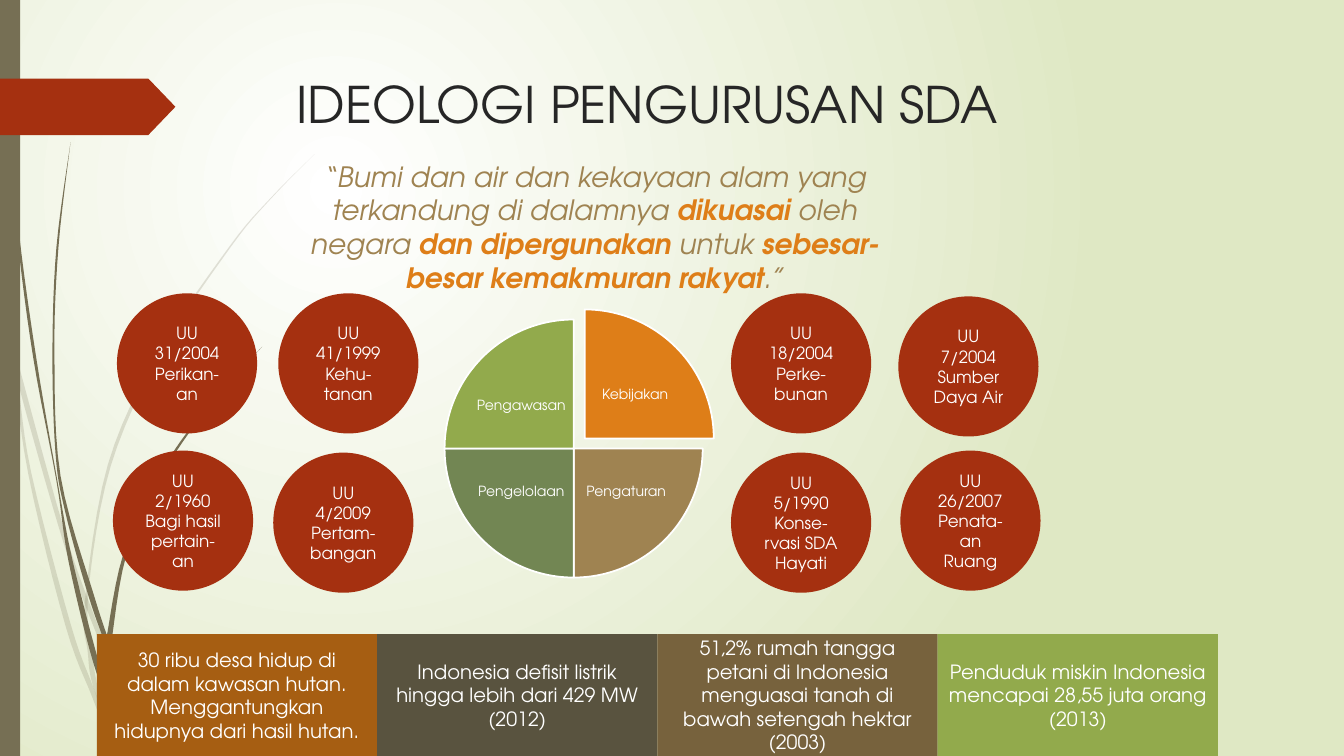
from lxml import etree
from pptx import Presentation
from pptx.dml.color import RGBColor
from pptx.enum.shapes import MSO_SHAPE
from pptx.enum.text import MSO_ANCHOR, PP_ALIGN
from pptx.oxml.ns import qn
from pptx.util import Inches, Pt

RECT, OVAL = MSO_SHAPE.RECTANGLE, MSO_SHAPE.OVAL
PIE, TAG = MSO_SHAPE.PIE, MSO_SHAPE.PENTAGON
TOP, MIDDLE = MSO_ANCHOR.TOP, MSO_ANCHOR.MIDDLE
LEFT, CENTER = PP_ALIGN.LEFT, PP_ALIGN.CENTER

FONT = "TeX Gyre Adventor"
WHITE = RGBColor(0xFF, 0xFF, 0xFF)
PALE_GREEN = RGBColor(0xDF, 0xE8, 0xC4)
INK = RGBColor(0x26, 0x26, 0x26)
RED = RGBColor(0xA5, 0x30, 0x10)
ORANGE = RGBColor(0xDE, 0x7E, 0x18)
TAN = RGBColor(0x9F, 0x83, 0x51)
MOSS = RGBColor(0x72, 0x86, 0x53)
GREEN = RGBColor(0x92, 0xAA, 0x4C)
OLIVE = RGBColor(0x76, 0x6F, 0x54)
RUST = RGBColor(0xA6, 0x5E, 0x12)
DARK_OLIVE = RGBColor(0x59, 0x53, 0x3F)
BROWN = RGBColor(0x77, 0x62, 0x3D)

WIDTH, HEIGHT = 13.33, 7.5
CIRCLE = 1.39
PIE_SIZE = 2.56
FACT_LEFT, FACT_TOP, FACT_WIDTH = 0.96, 6.29, 2.78

# Each stem of grass: the points of its two edges, in inches
PALE_STEMS = [
    ([(0, 2.99), (0.1, 3.44), (0.28, 4.7), (0.65, 6.21), (0.92, 6.93), (1.14, 7.5)],
     [(1.19, 7.5), (0.93, 6.83), (0.7, 6.19), (0.31, 4.69), (0.17, 3.76), (0, 2.82)]),
    ([(0.14, 3.45), (0.17, 3.76), (0.58, 5.22), (0.84, 5.99), (1.23, 6.94), (1.5, 7.5)],
     [(1.55, 7.5), (1.27, 6.92), (0.92, 6.07), (0.62, 5.2), (0.14, 3.45)]),
    ([(1.19, 7.5), (0.93, 6.83), (0.87, 6.46), (0.84, 5.99), (1.07, 4.61),
      (1.58, 3.48), (2.28, 2.44), (2.68, 1.97), (3.12, 1.53)],
     [(3.12, 1.53), (2.68, 1.98), (2.29, 2.45), (1.6, 3.49), (1.1, 4.62),
      (0.88, 5.84), (0.91, 6.46), (1.03, 7.06), (1.24, 7.5)]),
]
DARK_STEMS = [
    ([(0.03, 0), (0.07, 1.1), (0.17, 2.33), (0.33, 3.55), (0.56, 4.77),
      (0.68, 5.57), (0.93, 6.59), (1.17, 7.22), (1.27, 7.5)],
     [(1.33, 7.5), (1.1, 6.91), (0.98, 6.57), (0.72, 5.56), (0.57, 4.77),
      (0.36, 3.55), (0.19, 2.32), (0.08, 1.09), (0.04, 0)]),
    ([(0.7, 1.41), (0.56, 2.45), (0.52, 3.49), (0.55, 4.49), (0.64, 5.05),
      (0.88, 5.92), (1.11, 6.56), (1.32, 7.08), (1.52, 7.5)],
     [(1.57, 7.5), (1.36, 7.06), (1.13, 6.49), (0.93, 5.9), (0.6, 4.72),
      (0.54, 3.49), (0.58, 2.45), (0.7, 1.41)]),
    ([(1.06, 6.31), (1.22, 5.51), (1.56, 4.74), (2.04, 4.05), (2.6, 3.44)],
     [(2.6, 3.44), (2.05, 4.06), (1.58, 4.76), (1.25, 5.52), (1.1, 6.41)]),
]

# Wedge left, top, start and end angle (in 1/60000 degree / 100000), colour,
# then label and its left and top
WEDGES = [
    (4.52, 3.07, 162, 0, ORANGE, "Kebijakan", 5.83, 3.54),
    (4.41, 3.17, 0, 54, TAN, "Pengaturan", 5.74, 4.5),
    (4.41, 3.17, 54, 108, MOSS, "Pengelolaan", 4.7, 4.5),
    (4.41, 3.17, 108, 162, GREEN, "Pengawasan", 4.7, 3.65),
]
QUOTE = [
    ("“Bumi dan air dan kekayaan alam yang terkandung di dalamnya ", False),
    ("dikuasai", True), (" oleh negara ", False),
    ("dan dipergunakan", True), (" untuk ", False),
    ("sebesar-besar kemakmuran rakyat", True), (".”", False),
]
LAWS = [
    (2.76, 2.91, "UU 41/1999 Kehu-tanan"),
    (2.71, 4.49, "UU 4/2009 Pertam-bangan"),
    (7.25, 4.49, "UU 5/1990 Konse-rvasi SDA Hayati"),
    (7.25, 2.91, "UU 18/2004 Perke-bunan"),
    (1.16, 2.91, "UU 31/2004 Perikan-an"),
    (8.91, 2.94, "UU 7/2004 Sumber Daya Air"),
    (1.12, 4.47, "UU 2/1960 Bagi hasil pertain-an"),
    (8.93, 4.47, "UU 26/2007 Penata-an Ruang"),
]
FACTS = [
    (RUST, "30 ribu desa hidup di dalam kawasan hutan. "
           "Menggantungkan hidupnya dari hasil hutan."),
    (DARK_OLIVE, "Indonesia defisit listrik hingga lebih dari 429 MW (2012)"),
    (BROWN, "51,2% rumah tangga petani di Indonesia menguasai tanah "
            "di bawah setengah hektar (2003)"),
    (GREEN, "Penduduk miskin Indonesia mencapai 28,55 juta orang (2013)"),
]


def paint_background(s):
    """Radial gradient, white at the upper left."""
    fill = s.background.fill
    fill.gradient()
    for stop, color in zip(fill.gradient_stops, (WHITE, PALE_GREEN)):
        stop.color.rgb = color
    grad = s._element.find(".//" + qn("a:gradFill"))
    grad.remove(grad.find(qn("a:lin")))
    circle = etree.SubElement(grad, qn("a:path"), path="circle")
    etree.SubElement(circle, qn("a:fillToRect"),
                     l="50000", t="50000", r="100000", b="100000")


def smooth(points, steps=6):
    """Catmull-Rom curve through the points."""
    padded = [points[0], *points, points[-1]]
    curve = []
    for a, b, c, d in zip(padded, padded[1:], padded[2:], padded[3:]):
        for t in (i / steps for i in range(steps)):
            curve.append(tuple(
                b[k] + t * (c[k] - a[k]) / 2
                + t * t * (a[k] - 2.5 * b[k] + 2 * c[k] - d[k] / 2)
                + t ** 3 * (3 * b[k] - 3 * c[k] + d[k] - a[k]) / 2
                for k in (0, 1)))
    return curve + [points[-1]]


def finish(sp, color):
    sp.shadow.inherit = False
    sp.fill.solid()
    sp.fill.fore_color.rgb = color
    sp.line.fill.background()


def add_stem(s, edges, opacity=None):
    outline = [(Inches(x), Inches(y)) for edge in edges for x, y in smooth(edge)]
    builder = s.shapes.build_freeform(*outline[0])
    builder.add_line_segments(outline[1:], close=True)
    sp = builder.convert_to_shape()
    finish(sp, OLIVE)
    if opacity:
        color = sp._element.spPr.find(".//" + qn("a:srgbClr"))
        etree.SubElement(color, qn("a:alpha"), val=str(opacity * 1000))


def add_block(s, kind, box, color):
    sp = s.shapes.add_shape(kind, *map(Inches, box))
    finish(sp, color)
    return sp


def write(sp, runs, size, color, anchor=MIDDLE, align=CENTER, before=0):
    """Put one paragraph of runs in the shape and return it."""
    tf = sp.text_frame
    tf.word_wrap = True
    tf.vertical_anchor = anchor
    p = tf.paragraphs[0]
    p.alignment = align
    p.space_before = Pt(before)
    p.font.size, p.font.name, p.font.color.rgb = Pt(size), FONT, color
    for text in runs:
        p.add_run().text = text
    return p


def add_text_box(s, box):
    return s.shapes.add_textbox(*map(Inches, box))


def add_wedge(s, left, top, start, end, color):
    sp = add_block(s, PIE, (left, top, PIE_SIZE, PIE_SIZE), color)
    sp.adjustments[0], sp.adjustments[1] = start, end
    sp.line.color.rgb = WHITE
    sp.line.width = Pt(1.25)


def add_wedge_label(s, text, left, top):
    sp = add_text_box(s, (left, top, 0.94, 0.76))
    tf = sp.text_frame
    tf.margin_left = tf.margin_right = tf.margin_top = tf.margin_bottom = Inches(0.01)
    write(sp, [text], 10, WHITE).line_spacing = 0.9


def add_quote(s):
    sp = add_text_box(s, (2.71, 1.53, 6.38, 1.45))
    p = write(sp, [text for text, _ in QUOTE], 20, TAN, anchor=TOP, before=6)
    p.font.italic = True
    for r, (_, strong) in zip(p.runs, QUOTE):
        if strong:
            r.font.bold = True
            r.font.color.rgb = ORANGE


def main():
    prs = Presentation()
    prs.slide_width, prs.slide_height = Inches(WIDTH), Inches(HEIGHT)
    s = prs.slides.add_slide(prs.slide_layouts[5])
    paint_background(s)
    for edges in PALE_STEMS:
        add_stem(s, edges, opacity=20)
    for edges in DARK_STEMS:
        add_stem(s, edges)
    add_block(s, RECT, (0, 0, 0.2, HEIGHT), OLIVE)
    add_block(s, TAG, (0, 0.78, 1.74, 0.56), RED).adjustments[0] = 0.48

    title = s.shapes.title
    title.left, title.top, title.width, title.height = map(
        Inches, (2.84, 0.68, 9.75, 1.4))
    write(title, ["IDEOLOGI PENGURUSAN SDA"], 36, INK, anchor=TOP, align=LEFT)

    for *wedge, label, left, top in WEDGES:
        add_wedge(s, *wedge)
        add_wedge_label(s, label, left, top)
    add_quote(s)
    for left, top, law in LAWS:
        write(add_block(s, OVAL, (left, top, CIRCLE, CIRCLE), RED), [law], 12, WHITE)
    for i, (color, fact) in enumerate(FACTS):
        box = (FACT_LEFT + i * FACT_WIDTH, FACT_TOP, FACT_WIDTH, HEIGHT - FACT_TOP)
        write(add_block(s, RECT, box, color), [fact], 14, WHITE, before=10)
    prs.save("out.pptx")


if __name__ == "__main__":
    main()
